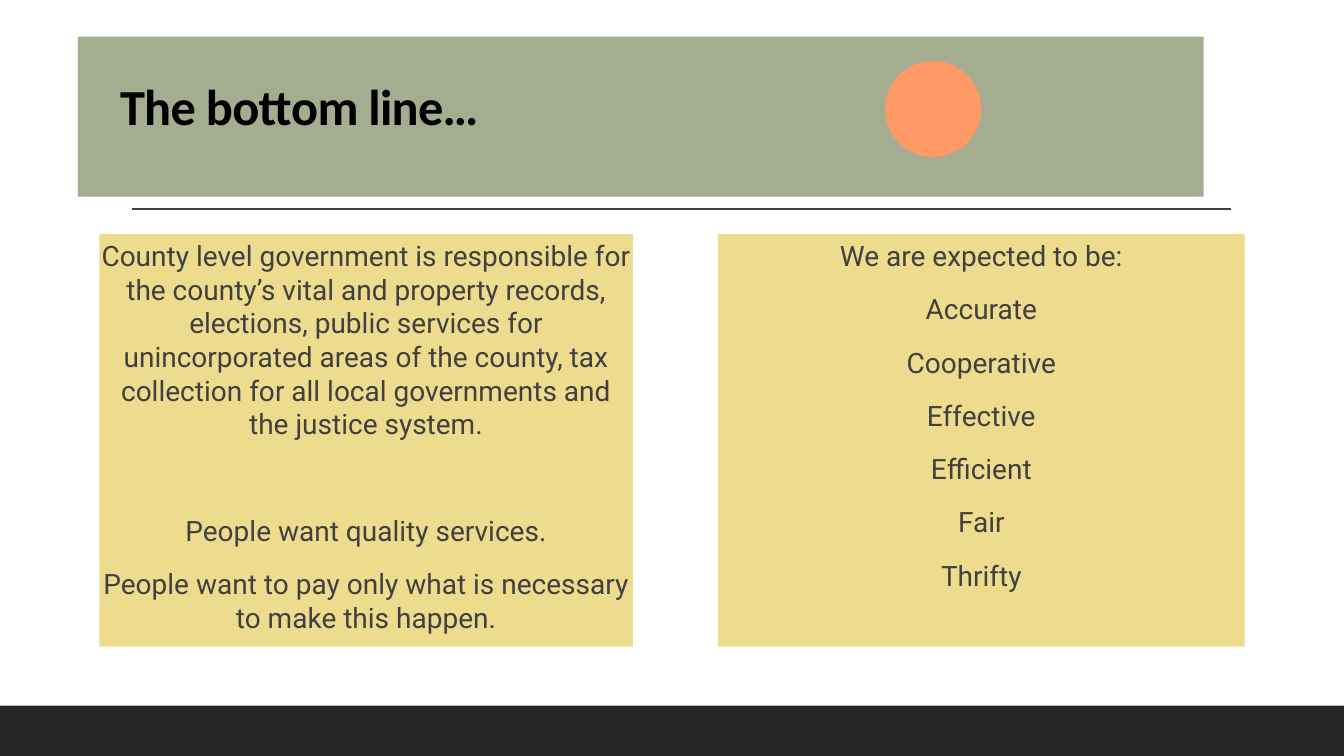
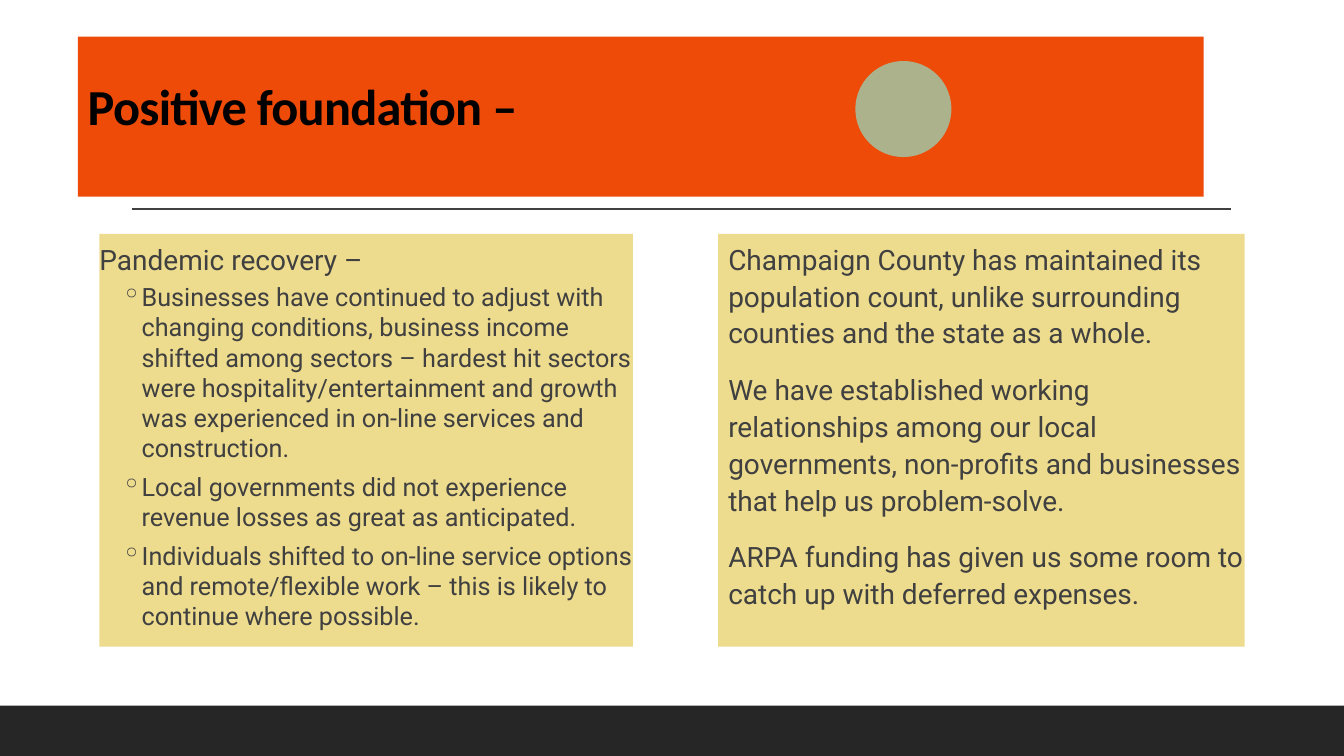
from lxml.etree import SubElement
from pptx import Presentation
from pptx.dml.color import RGBColor
from pptx.enum.shapes import MSO_CONNECTOR, MSO_SHAPE
from pptx.enum.text import MSO_ANCHOR, PP_ALIGN
from pptx.oxml.ns import qn
from pptx.util import Pt

SLIDE_W, SLIDE_H = 960, 540
FOOTER_H = 36
INK, FOOTER, PANEL, TITLE_INK = "404040", "262626", "EEDC8E", "000000"
SAGE, PALE_SAGE, ORANGE, PEACH = "A5AD91", "ACB28C", "EE4A08", "FF9966"
BAND = (55.6, 26.2, 804.2, 114.2)
LEFT_PANEL = (71, 167, 381, 295)
RIGHT_PANEL = (513, 167, 376, 295)


def color(hex_code):
    """Turn a hex string into a colour."""
    return RGBColor.from_string(hex_code)


def filled(slide, kind, box, fill):
    """Add a flat preset shape without outline or shadow."""
    shape = slide.shapes.add_shape(kind, *map(Pt, box))
    shape.shadow.inherit = False
    shape.fill.solid()
    shape.fill.fore_color.rgb = color(fill)
    shape.line.fill.background()
    return shape


def set_insets(frame, left, top, right, bottom):
    """Set the four inner margins of a text frame."""
    frame.margin_left, frame.margin_top = Pt(left), Pt(top)
    frame.margin_right, frame.margin_bottom = Pt(right), Pt(bottom)
    frame.word_wrap = True


def style_font(paragraph, name, size, ink, bold=False):
    """Set the font of a whole paragraph."""
    font = paragraph.font
    font.name, font.size, font.bold = name, Pt(size), bold
    font.color.rgb = color(ink)


def add_frame(slide):
    """Draw the footer bar and the rule below the title."""
    filled(slide, MSO_SHAPE.RECTANGLE,
           (0, SLIDE_H - FOOTER_H, SLIDE_W, FOOTER_H), FOOTER)
    rule = slide.shapes.add_connector(
        MSO_CONNECTOR.STRAIGHT, Pt(94.3), Pt(149.4), Pt(879), Pt(149.4))
    rule.line.color.rgb = color(INK)
    rule.line.width = Pt(1)
    SubElement(rule._element.spPr, qn("a:effectLst"))


def add_title(slide, box, text, fill, dot_fill, dot_offset, indent):
    """Draw the title band with its dot."""
    left, top, _, _ = box
    band = filled(slide, MSO_SHAPE.RECTANGLE, box, fill)
    frame = band.text_frame
    set_insets(frame, 7.2 + indent, 3.6, 7.2, 43)
    frame.vertical_anchor = MSO_ANCHOR.BOTTOM
    title = frame.paragraphs[0]
    title.alignment = PP_ALIGN.LEFT
    title.line_spacing = 0.9
    style_font(title, "Calibri", 36, TITLE_INK, True)
    run = title.add_run()
    run.text = text
    run._r.get_or_add_rPr().set("spc", "-50")
    filled(slide, MSO_SHAPE.OVAL, (left + dot_offset, top + 17.4, 68.6, 68.6), dot_fill)


def add_panel(slide, box):
    """Draw a text panel and return its text frame."""
    frame = filled(slide, MSO_SHAPE.RECTANGLE, box, PANEL).text_frame
    set_insets(frame, 0, 3.6, 0, 3.6)
    frame.vertical_anchor = MSO_ANCHOR.TOP
    return frame


def add_text(frame, text, align=PP_ALIGN.LEFT, size=20, spacing=1.0,
             before=12, after=2, indent=0, bullet=None):
    """Add one paragraph to a panel."""
    first = frame.paragraphs[0]
    paragraph = frame.add_paragraph() if first.runs else first
    paragraph.alignment = align
    paragraph.line_spacing = spacing
    paragraph.space_before, paragraph.space_after = Pt(before), Pt(after)
    properties = paragraph._p.get_or_add_pPr()
    properties.set("marL", str(Pt(indent)))
    if bullet:
        paragraph.level = 1
        properties.set("indent", str(Pt(-14.4)))
        SubElement(properties, qn("a:buChar")).set("char", bullet)
    style_font(paragraph, "Roboto", size, INK)
    paragraph.add_run().text = text


def bottom_line(slide):
    """Build the slide on what people expect."""
    add_frame(slide)
    duties = add_panel(slide, LEFT_PANEL)
    for text, before in (
        ("County level government is responsible for the county’s vital and "
         "property records, elections, public services for unincorporated "
         "areas of the county, tax collection for all local governments and "
         "the justice system.", 12),
        ("People want quality services.", 50),
        ("People want to pay only what is necessary to make this happen.", 12),
    ):
        add_text(duties, text, PP_ALIGN.CENTER, before=before)
    expectations = add_panel(slide, RIGHT_PANEL)
    for text in ("We are expected to be:", "Accurate", "Cooperative",
                 "Effective", "Efficient", "Fair", "Thrifty"):
        add_text(expectations, text, PP_ALIGN.CENTER)
    add_title(slide, BAND, "The bottom line…", SAGE, PEACH, 576.6, 23)


def positive_foundation(slide):
    """Build the slide on recovery and strengths."""
    add_frame(slide)
    recovery = add_panel(slide, LEFT_PANEL)
    add_text(recovery, "Pandemic recovery –", spacing=1.1)
    for text in (
        "Businesses have continued to adjust with changing conditions, "
        "business income shifted among sectors – hardest hit sectors were "
        "hospitality/entertainment and growth was experienced in on-line "
        "services and construction.",
        "Local governments did not experience revenue losses as great as "
        "anticipated.",
        "Individuals shifted to on-line service options and remote/flexible "
        "work – this is likely to continue where possible.",
    ):
        add_text(recovery, text, size=18, before=2, after=4, indent=30.2, bullet="◦")
    strengths = add_panel(slide, RIGHT_PANEL)
    for text in (
        "Champaign County has maintained its population count, unlike "
        "surrounding counties and the state as a whole.",
        "We have established working relationships among our local "
        "governments, non-profits and businesses that help us problem-solve.",
        "ARPA funding has given us some room to catch up with deferred expenses.",
    ):
        add_text(strengths, text, spacing=1.1, indent=7.2)
    add_title(slide, BAND, "Positive foundation –", ORANGE, PALE_SAGE, 555.4, 0)


def main():
    """Build and save the presentation."""
    presentation = Presentation()
    presentation.slide_width, presentation.slide_height = Pt(SLIDE_W), Pt(SLIDE_H)
    for build in (bottom_line, positive_foundation):
        build(presentation.slides.add_slide(presentation.slide_layouts[6]))
    presentation.save("out.pptx")


if __name__ == "__main__":
    main()
